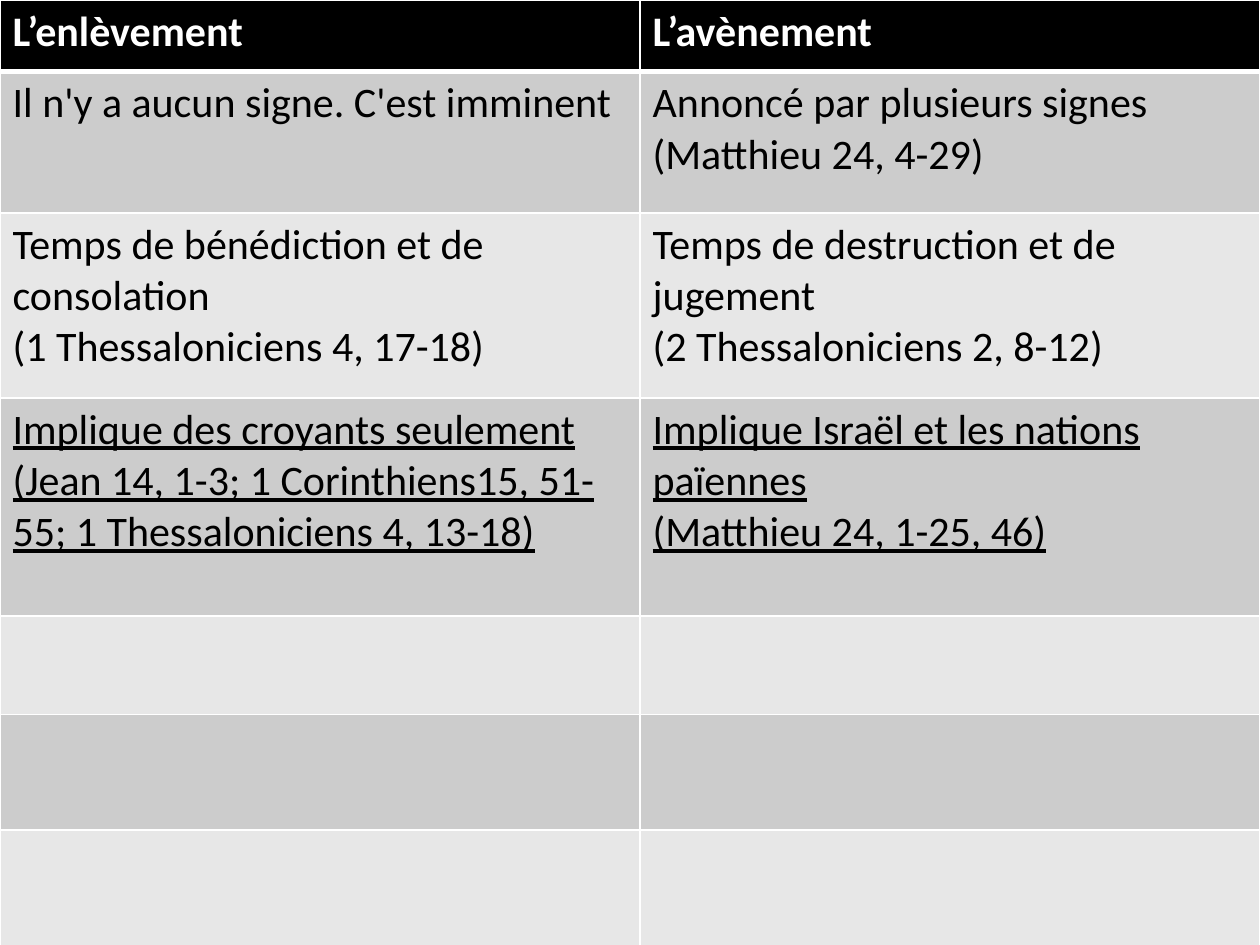
from lxml import etree
from pptx import Presentation
from pptx.dml.color import RGBColor
from pptx.oxml.ns import qn
from pptx.util import Inches, Pt

BLACK = RGBColor(0x00, 0x00, 0x00)
WHITE = RGBColor(0xFF, 0xFF, 0xFF)
DARK = RGBColor(0xCC, 0xCC, 0xCC)
LIGHT = RGBColor(0xE7, 0xE7, 0xE7)

COLS = [5.08, 4.92]
ROWS = [0.57, 1.12, 1.47, 1.73, 0.78, 0.92, 0.92]
UNDER = 3  # underlined row
TEXTS = [
    ("L’enlèvement", "L’avènement"),
    ("Il n'y a aucun signe. C'est imminent",
     "Annoncé par plusieurs signes\n(Matthieu 24, 4-29)"),
    ("Temps de bénédiction et de consolation\n(1 Thessaloniciens 4, 17-18)",
     "Temps de destruction et de jugement\n(2 Thessaloniciens 2, 8-12)"),
    ("Implique des croyants seulement\n"
     "(Jean 14, 1-3; 1 Corinthiens15, 51-55; 1 Thessaloniciens 4, 13-18)",
     "Implique Israël et les nations païennes\n(Matthieu 24, 1-25, 46)"),
    ("", ""),
    ("", ""),
    ("", ""),
]


class Deck:
    font = "Calibri"
    size = Pt(24)

    def __init__(self, wide, high):
        self.prs = Presentation()
        self.prs.slide_width = Inches(wide)
        self.prs.slide_height = Inches(high)
        self.slide = self.prs.slides.add_slide(self.prs.slide_layouts[6])

    def table(self, left, top, cols, rows):
        frame = self.slide.shapes.add_table(
            len(rows), len(cols), Inches(left), Inches(top),
            Inches(sum(cols)), Inches(sum(rows)))
        grid = frame.table
        for col, width in zip(grid.columns, cols):
            col.width = Inches(width)
        for row, height in zip(grid.rows, rows):
            row.height = Inches(height)
        return grid

    def cell(self, cell, text, fill, color, bold=False, under=False):
        cell.fill.solid()
        cell.fill.fore_color.rgb = fill
        cell.text_frame.text = text
        for para in cell.text_frame.paragraphs:
            # Empty cells keep the style on the paragraph itself
            for font in [run.font for run in para.runs] or [para.font]:
                font.name, font.size = self.font, self.size
                font.bold, font.underline = bold, under
                font.color.rgb = color

    def border(self, cell, color, top=1, bottom=1):
        props = cell._tc.get_or_add_tcPr()
        sides = [("L", 1), ("R", 1), ("T", top), ("B", bottom)]
        for spot, (side, width) in enumerate(sides):
            line = etree.Element(qn(f"a:ln{side}"), w=str(Pt(width)))
            solid = etree.SubElement(line, qn("a:solidFill"))
            etree.SubElement(solid, qn("a:srgbClr"), val=str(color))
            props.insert(spot, line)


def main():
    deck = Deck(10, 7.5)

    # Comparison table
    grid = deck.table(0, 0, COLS, ROWS)
    for r, texts in enumerate(TEXTS):
        head = r == 0
        fill = BLACK if head else DARK if r % 2 else LIGHT
        for c, text in enumerate(texts):
            cell = grid.cell(r, c)
            deck.cell(cell, text, fill, WHITE if head else BLACK,
                      bold=head, under=r == UNDER)
            # Thick rule below the heading
            deck.border(cell, WHITE, top=3 if r == 1 else 1,
                        bottom=3 if head else 1)

    deck.prs.save("out.pptx")


if __name__ == "__main__":
    main()
